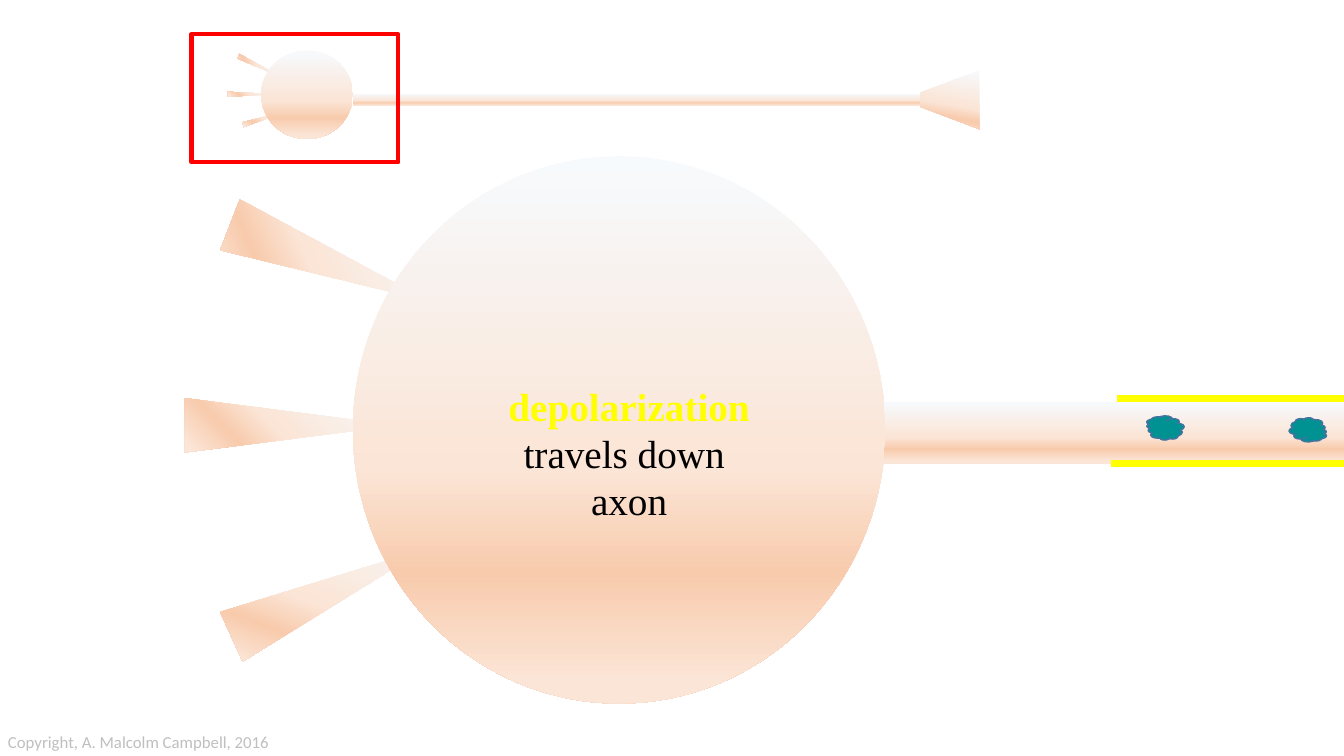
from lxml import etree
from pptx import Presentation
from pptx import util as u
from pptx.dml.color import RGBColor
from pptx.enum import shapes, text
from pptx.oxml import ns

PALE_BLUE = RGBColor(0xF7, 0xFA, 0xFD)
PALE_PEACH = RGBColor(0xFB, 0xE5, 0xD6)
PEACH = RGBColor(0xF8, 0xCB, 0xAD)
RED = RGBColor(0xFF, 0x00, 0x00)
YELLOW = RGBColor(0xFF, 0xFF, 0x00)
TEAL = RGBColor(0x00, 0x91, 0x93)
STEEL = RGBColor(0x43, 0x73, 0x9E)
BLACK = RGBColor(0x00, 0x00, 0x00)
GRAY = RGBColor(0xBF, 0xBF, 0xBF)

MEMBRANE_STOPS = [(0, PALE_BLUE), (57, PALE_PEACH), (76, PEACH), (96, PALE_PEACH)]
SHAPE = shapes.MSO_SHAPE


def add_plain_shape(slide, kind, box, rotation=0):
    shape = slide.shapes.add_shape(kind, *map(u.Inches, box))
    shape.shadow.inherit = False
    shape.rotation = rotation
    return shape


def add_membrane(slide, kind, box, angle=90, rotation=0):
    """Add a borderless shape with the cell gradient, angle clockwise."""
    shape = add_plain_shape(slide, kind, box, rotation)
    shape.line.fill.background()
    shape.fill.gradient()
    shape.fill.gradient_angle = 360 - angle
    stops = shape.fill._fill._gradFill.find(ns.qn("a:gsLst"))
    for stop in list(stops):
        stops.remove(stop)
    for position, color in MEMBRANE_STOPS:
        stop = etree.SubElement(stops, ns.qn("a:gs"), pos=str(position * 1000))
        etree.SubElement(stop, ns.qn("a:srgbClr"), val=str(color))
    return shape


def add_neuron(slide, soma, axon, dendrite_size, dendrites):
    """Place axon and dendrites at offsets from the soma's corner."""
    left, top, _, _ = soma
    # Axon
    x, y, *axon_size = axon
    add_membrane(slide, SHAPE.RECTANGLE, (left + x, top + y, *axon_size))
    # Dendrites
    for x, y, rotation in dendrites:
        add_membrane(slide, SHAPE.ISOSCELES_TRIANGLE,
                     (left + x, top + y, *dendrite_size), 45, rotation)
    # Soma
    add_membrane(slide, SHAPE.OVAL, soma)


def add_overview(slide, box):
    """Whole neuron, with a frame around the enlarged part."""
    left, top = box[:2]
    add_neuron(slide, (left + 0.69, top + 0.16, 0.91, 0.88),
               (0.91, 0.43, 5.64, 0.12), (0.05, 0.49),
               [(-0.03, -0.08, 116), (-0.11, 0.19, 90), (0.03, 0.42, 73)])
    # Axon terminal
    terminal = add_membrane(slide, SHAPE.TRAPEZOID,
                            (left + 7.23, top + 0.36, 0.58, 0.58), 190, 270)
    terminal.adjustments[0] = 0.377
    # Frame
    frame = add_plain_shape(slide, SHAPE.RECTANGLE, box)
    frame.fill.background()
    frame.line.color.rgb = RED
    frame.line.width = u.Pt(3)


def add_depolarized_axon(slide, box):
    """Channels inside the axon and depolarized membrane along its edges."""
    left, top, width, height = box
    # Channels
    for x, y, rotation in [(0.42, 0.11, 266.9), (1.83, 0.13, 87.4)]:
        channel = add_plain_shape(slide, SHAPE.CLOUD,
                                  (left + x, top + y, 0.24, 0.37), rotation)
        channel.fill.solid()
        channel.fill.fore_color.rgb = TEAL
        channel.line.color.rgb = STEEL
        channel.line.width = u.Pt(1)
    # Membrane edges
    for start, y in [(left, top + height), (left + 0.06, top)]:
        edge = slide.shapes.add_connector(
            shapes.MSO_CONNECTOR.STRAIGHT,
            *map(u.Inches, (left + width, y, start, y)))
        edge.line.color.rgb = YELLOW
        edge.line.width = u.Pt(5)
        etree.SubElement(edge._element.spPr, ns.qn("a:effectLst"))


def add_text(slide, box, lines, align, wrap, font_format):
    """Each line is its words, colour and weight."""
    text_box = slide.shapes.add_textbox(*map(u.Inches, box))
    frame = text_box.text_frame
    frame.word_wrap = wrap
    frame.auto_size = text.MSO_AUTO_SIZE.SHAPE_TO_FIT_TEXT
    for number, (words, color, bold) in enumerate(lines):
        paragraph = frame.add_paragraph() if number else frame.paragraphs[0]
        paragraph.alignment = align
        run = paragraph.add_run()
        run.text = words
        for name, value in {**font_format, "bold": bold}.items():
            setattr(run.font, name, value)
        run.font.color.rgb = color
    return frame


def add_caption(slide, box):
    frame = add_text(slide, box,
                     [("depolarization", YELLOW, True),
                      ("travels down ", BLACK, False),
                      ("axon", BLACK, False)],
                     text.PP_ALIGN.CENTER, True,
                     {"name": "Times New Roman", "size": u.Pt(28)})
    # Thin dark outline on the highlighted word
    properties = frame.paragraphs[0].runs[0].font._element
    outline = etree.Element(ns.qn("a:ln"), w=str(u.Pt(0.75)))
    fill = etree.SubElement(outline, ns.qn("a:solidFill"))
    etree.SubElement(fill, ns.qn("a:srgbClr"), val=str(BLACK))
    properties.insert(0, outline)


def add_copyright(slide, box):
    add_text(slide, box, [("Copyright, A. Malcolm Campbell, 2016", GRAY, False)],
             text.PP_ALIGN.LEFT, False, {"name": "Calibri", "size": u.Pt(12)})


def main():
    presentation = Presentation()
    presentation.slide_width = u.Inches(13.33)
    presentation.slide_height = u.Inches(7.5)
    slide = presentation.slides.add_slide(presentation.slide_layouts[6])

    add_overview(slide, (1.9, 0.34, 2.05, 1.27))
    # Enlarged cell body
    add_neuron(slide, (3.5, 1.55, 5.28, 5.43), (4.93, 2.44, 5.64, 0.61),
               (0.54, 2.12), [(-0.5, 0, 111), (-0.88, 1.61, 90), (-0.51, 3.27, 65.6)])
    add_depolarized_axon(slide, (11.02, 3.95, 2.31, 0.65))
    add_caption(slide, (3.71, 3.74, 5.06, 1.51))
    add_copyright(slide, (-0.02, 7.21, 2.82, 0.3))
    presentation.save("out.pptx")


if __name__ == "__main__":
    main()
